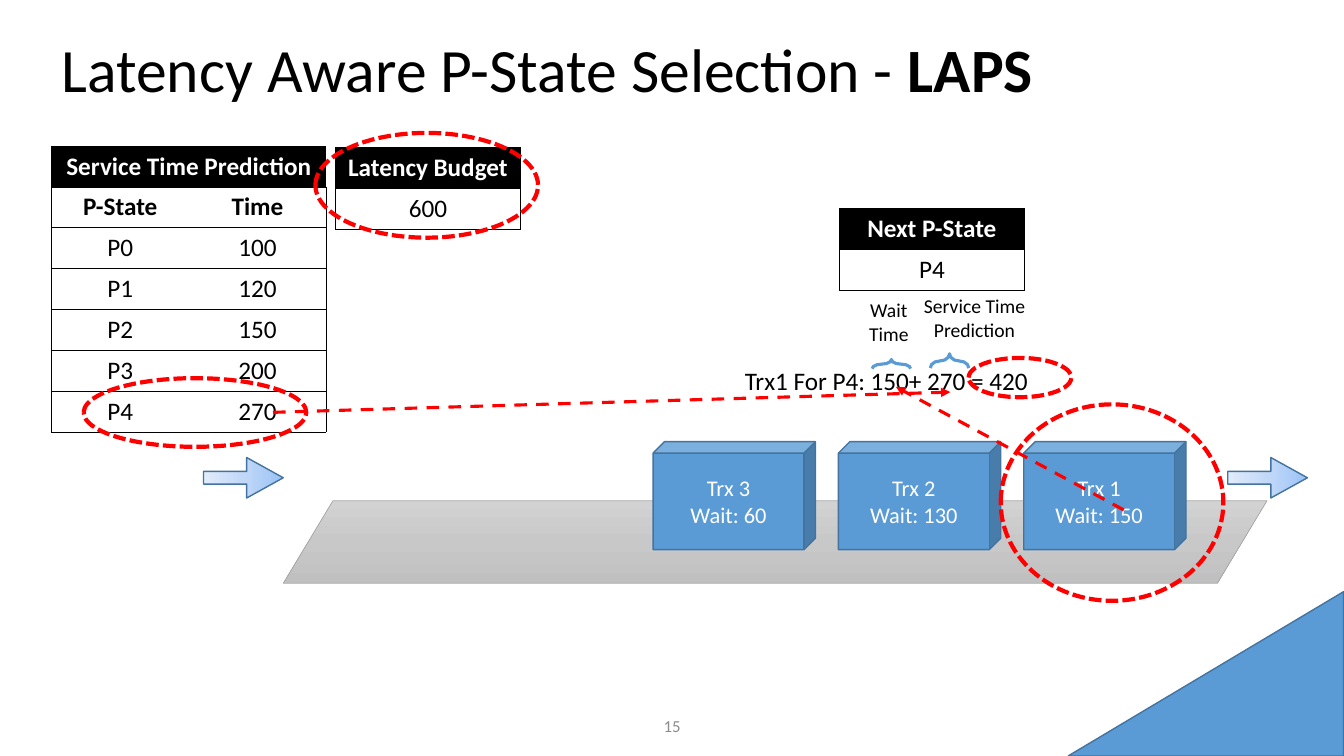
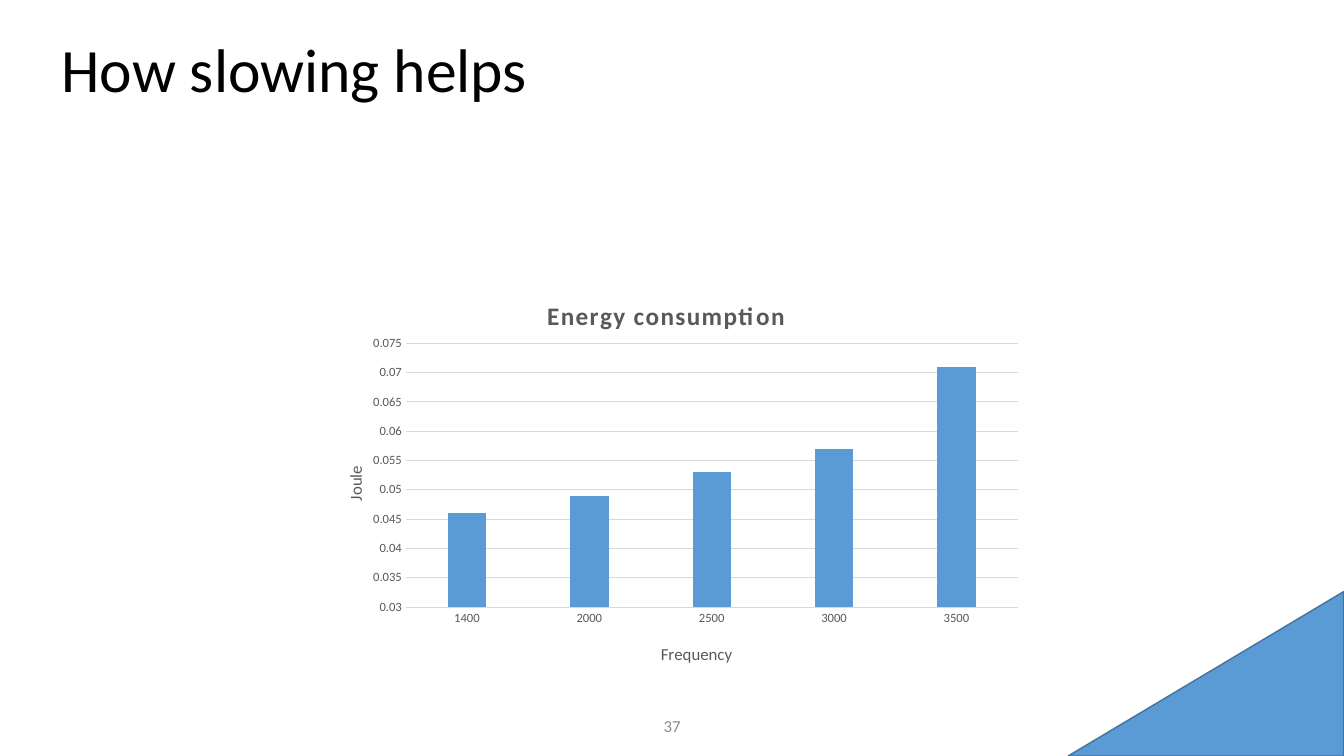
from dataclasses import dataclass
from typing import Optional

import pptx
import pptx.chart.data
import pptx.dml.color
import pptx.enum.chart
import pptx.enum.dml
import pptx.enum.shapes
import pptx.enum.text
import pptx.oxml
import pptx.oxml.ns
import pptx.util
from lxml import etree

Cm = pptx.util.Cm
Pt = pptx.util.Pt
RGBColor = pptx.dml.color.RGBColor
SHAPE = pptx.enum.shapes.MSO_SHAPE
DASH = pptx.enum.dml.MSO_LINE
ALIGN = pptx.enum.text.PP_ALIGN
ANCHOR = pptx.enum.text.MSO_ANCHOR
qn = pptx.oxml.ns.qn

# Shared look
FONT = "Calibri"
BLACK = RGBColor(0x00, 0x00, 0x00)
WHITE = RGBColor(0xFF, 0xFF, 0xFF)
BLUE = RGBColor(0x5B, 0x9B, 0xD5)
DARK_BLUE = RGBColor(0x43, 0x73, 0x9E)
RED = RGBColor(0xFF, 0x00, 0x00)
GREY = RGBColor(0xA5, 0xA5, 0xA5)
NUMBER_GREY = RGBColor(0x8C, 0x8C, 0x8C)
CHART_GREY = RGBColor(0x59, 0x59, 0x59)
GRID_GREY = RGBColor(0xD9, 0xD9, 0xD9)
BELT_GREYS = (RGBColor(0xD2, 0xD2, 0xD2), RGBColor(0xC8, 0xC8, 0xC8), RGBColor(0xC0, 0xC0, 0xC0))
ARROW_BLUES = (RGBColor(0x9A, 0xC3, 0xF5), RGBColor(0xC2, 0xD8, 0xF8), RGBColor(0xE1, 0xEB, 0xFB))
ROW_HEIGHT = 1.03


@dataclass(frozen=True)
class Box:
    """Place and size in centimetres."""
    x: float
    y: float
    w: float
    h: float

    def emu(self) -> tuple:
        return Cm(self.x), Cm(self.y), Cm(self.w), Cm(self.h)


@dataclass(frozen=True)
class Run:
    text: str
    size: float = 18
    color: RGBColor = BLACK
    bold: bool = False


@dataclass(frozen=True)
class Grid:
    x: float
    y: float
    col_width: float
    header: str
    rows: tuple
    bold_rows: int = 0


def style_font(font, size: float, color: RGBColor, bold: bool = False) -> None:
    font.name, font.size, font.bold = FONT, Pt(size), bold
    font.color.rgb = color


def fill_paragraph(p, runs: list, align=ALIGN.LEFT) -> None:
    p.alignment = align
    for run in runs:
        r = p.add_run()
        r.text = run.text
        style_font(r.font, run.size, run.color, run.bold)


def add_text(slide, box: Box, lines: list, align=ALIGN.LEFT, anchor=ANCHOR.TOP, spacing: float = 1.0) -> None:
    tf = slide.shapes.add_textbox(*box.emu()).text_frame
    tf.word_wrap = True
    tf.vertical_anchor = anchor
    for i, runs in enumerate(lines):
        p = tf.add_paragraph() if i else tf.paragraphs[0]
        p.line_spacing = spacing
        fill_paragraph(p, runs, align)


def add_shape(slide, kind, box: Box, line: RGBColor = DARK_BLUE, width: float = 1,
              fill: Optional[RGBColor] = None, adj: tuple = ()):
    s = slide.shapes.add_shape(kind, *box.emu())
    s.shadow.inherit = False
    for i, value in enumerate(adj):
        s.adjustments[i] = value
    if fill is None:
        s.fill.background()
    else:
        s.fill.solid()
        s.fill.fore_color.rgb = fill
    s.line.color.rgb = line
    s.line.width = Pt(width)
    return s


def set_gradient(s, colors: tuple, angle: int) -> None:
    """Replace the empty fill by evenly spaced colour stops."""
    grad = etree.Element(qn("a:gradFill"), rotWithShape="1")
    stops = etree.SubElement(grad, qn("a:gsLst"))
    for i, color in enumerate(colors):
        gs = etree.SubElement(stops, qn("a:gs"), pos=str(100000 * i // (len(colors) - 1)))
        etree.SubElement(gs, qn("a:srgbClr"), val=str(color))
    etree.SubElement(grad, qn("a:lin"), ang=str(angle * 60000), scaled="0")
    sp_pr = s._element.spPr
    sp_pr.replace(sp_pr.find(qn("a:noFill")), grad)


def add_ring(slide, box: Box) -> None:
    add_shape(slide, SHAPE.OVAL, box, RED, 3).line.dash_style = DASH.SQUARE_DOT


def add_pointer(slide, start: tuple, end: tuple) -> None:
    kind = pptx.enum.shapes.MSO_CONNECTOR.STRAIGHT
    s = slide.shapes.add_connector(kind, *(Cm(v) for v in start + end))
    s.line.color.rgb = RED
    s.line.width = Pt(2.25)
    s.line.dash_style = DASH.DASH
    etree.SubElement(s.line._get_or_add_ln(), qn("a:tailEnd"), type="triangle")
    etree.SubElement(s._element.spPr, qn("a:effectLst"))


def set_borders(cell, sides: str) -> None:
    tc_pr = cell._tc.get_or_add_tcPr()
    for side in "LRTB":
        ln = etree.SubElement(tc_pr, qn(f"a:ln{side}"), w=str(Pt(0.5)))
        if side in sides:
            solid = etree.SubElement(ln, qn("a:solidFill"))
            etree.SubElement(solid, qn("a:srgbClr"), val=str(BLACK))
        else:
            etree.SubElement(ln, qn("a:noFill"))


def add_grid(slide, grid: Grid) -> None:
    n_cols, n_rows = len(grid.rows[0]), len(grid.rows) + 1
    box = Box(grid.x, grid.y, grid.col_width * n_cols, ROW_HEIGHT * n_rows)
    table = slide.shapes.add_table(n_rows, n_cols, *box.emu()).table
    table.first_row = table.horz_banding = False
    header = (grid.header,) + ("",) * (n_cols - 1)
    for i, texts in enumerate((header,) + grid.rows):
        for j, text in enumerate(texts):
            cell = table.cell(i, j)
            set_borders(cell, "TB" + "L" * (j == 0) + "R" * (j == n_cols - 1))
            if i == 0:
                cell.fill.solid()
                cell.fill.fore_color.rgb = BLACK
            else:
                cell.fill.background()
            if text:
                run = Run(text, color=BLACK if i else WHITE, bold=i <= grid.bold_rows)
                fill_paragraph(cell.text_frame.paragraphs[0], [run], ALIGN.CENTER)
    if n_cols > 1:
        table.cell(0, 0).merge(table.cell(0, n_cols - 1))


def set_layout(parent, index: int, **fractions: float) -> None:
    """Fix the place of a chart part as fractions of the chart."""
    old = parent.find(qn("c:layout"))
    if old is not None:
        parent.remove(old)
    layout = etree.Element(qn("c:layout"))
    parent.insert(index, layout)
    manual = etree.SubElement(layout, qn("c:manualLayout"))
    if "w" in fractions:
        etree.SubElement(manual, qn("c:layoutTarget"), val="inner")
    for key in "xy":
        etree.SubElement(manual, qn(f"c:{key}Mode"), val="edge")
    for key, value in fractions.items():
        etree.SubElement(manual, qn(f"c:{key}"), val=str(value))


def set_chart_title(title, run: Run, x: float, y: float):
    tf = title.text_frame
    fill_paragraph(tf.paragraphs[0], [run], ALIGN.CENTER)
    set_layout(title._element, 1, x=x, y=y)
    return tf


def new_slide(prs, title: list, number: int):
    """Blank slide with corner triangle, title and slide number."""
    slide = prs.slides.add_slide(prs.slide_layouts[6])
    add_shape(slide, SHAPE.ISOSCELES_TRIANGLE, Box(26.92, 14.91, 6.94, 4.14), fill=BLUE, adj=(1,))
    add_text(slide, Box(1.3, 0, 26.54, 3.68), [title], anchor=ANCHOR.MIDDLE, spacing=0.9)
    add_text(slide, Box(13.13, 17.78, 7.62, 1.02), [[Run(str(number), 12, NUMBER_GREY)]],
             ALIGN.CENTER, ANCHOR.MIDDLE)
    return slide


def build_laps(prs) -> None:
    slide = new_slide(prs, [Run("Latency Aware P-State Selection - ", 44), Run("LAPS", 44, bold=True)], 15)

    # Conveyor belt with arrows in and out
    belt = add_shape(slide, SHAPE.PARALLELOGRAM, Box(7.14, 12.62, 24.79, 2.08), GREY, 0.5, adj=(0.601,))
    set_gradient(belt, BELT_GREYS, 90)
    for x in (5.13, 30.94):
        arrow = add_shape(slide, SHAPE.RIGHT_ARROW, Box(x, 11.53, 2.01, 1.02), adj=(0.313, 0.904))
        set_gradient(arrow, ARROW_BLUES, 180)

    # Queued transactions
    for i, (name, wait) in enumerate((("Trx 3", 60), ("Trx 2", 130), ("Trx 1", 150))):
        cube = add_shape(slide, SHAPE.CUBE, Box(16.46 + 4.67 * i, 11.13, 4.09, 2.72), fill=BLUE, adj=(0.106,))
        tf = cube.text_frame
        tf.vertical_anchor = ANCHOR.MIDDLE
        fill_paragraph(tf.paragraphs[0], [Run(name, 16, WHITE)], ALIGN.CENTER)
        fill_paragraph(tf.add_paragraph(), [Run(f"Wait: {wait}", 16, WHITE)], ALIGN.CENTER)

    # Tables
    times = (("P0", "100"), ("P1", "120"), ("P2", "150"), ("P3", "200"), ("P4", "270"))
    for grid in (
        Grid(8.46, 3.71, 4.65, "Latency Budget", (("600",),)),
        Grid(21.16, 5.26, 4.65, "Next P-State", (("P4",),)),
        Grid(1.3, 3.68, 3.46, "Service Time Prediction", (("P-State", "Time"),) + times, bold_rows=1),
    ):
        add_grid(slide, grid)

    # Latency sum with braces and their labels
    add_text(slide, Box(18.52, 9.07, 11.38, 1.02), [[Run("Trx1 For P4: 150+ 270 = 420")]])
    for box in (Box(22.35, 8.69, 0.23, 0.97), Box(23.75, 8.61, 0.36, 0.97)):
        add_shape(slide, SHAPE.RIGHT_BRACE, box, BLUE, 2.25, adj=(1.084, 0.5)).rotation = 270
    add_text(slide, Box(20.8, 7.39, 3.2, 1.45), [[Run("Wait", 14)], [Run("Time", 14)]], ALIGN.CENTER)
    add_text(slide, Box(22.96, 7.29, 3.2, 1.45), [[Run("Service Time Prediction", 14)]], ALIGN.CENTER)

    # Highlights
    add_pointer(slide, (6.88, 10.39), (23.95, 9.88))
    add_pointer(slide, (28.32, 12.85), (22.58, 9.75))
    for box in (Box(2.11, 9.53, 5.61, 1.73), Box(7.95, 3.35, 5.61, 2.64),
                Box(24.41, 9.02, 2.59, 0.99), Box(25.22, 10.19, 5.61, 4.95)):
        add_ring(slide, box)


def build_energy(prs) -> None:
    slide = new_slide(prs, [Run("How slowing helps", 44)], 37)
    data = pptx.chart.data.CategoryChartData()
    data.categories = ["1400", "2000", "2500", "3000", "3500"]
    data.add_series("Series 1", (0.046, 0.049, 0.053, 0.057, 0.071))
    kind = pptx.enum.chart.XL_CHART_TYPE.COLUMN_CLUSTERED
    chart = slide.shapes.add_chart(kind, *Box(7.87, 6.78, 18.14, 10.39).emu(), data).chart
    style_font(chart.font, 10, BLACK)
    chart.has_legend = False

    # Columns
    plot = chart.plots[0]
    plot.vary_by_categories = False
    plot.gap_width, plot.overlap = 219, -27
    fill = plot.series[0].format.fill
    fill.solid()
    fill.fore_color.rgb = BLUE

    # Axes
    cat, val = chart.category_axis, chart.value_axis
    for axis in (cat, val):
        axis.major_tick_mark = axis.minor_tick_mark = pptx.enum.chart.XL_TICK_MARK.NONE
        style_font(axis.tick_labels.font, 9, CHART_GREY)
    val.minimum_scale, val.maximum_scale, val.major_unit = 0.03, 0.075, 0.005
    val.format.line.fill.background()
    val.has_major_gridlines = True
    for line in (cat.format.line, val.major_gridlines.format.line):
        line.color.rgb = GRID_GREY
        line.width = Pt(0.75)

    # Titles and plot area
    chart.has_title = True
    tf = set_chart_title(chart.chart_title, Run("Energy consumption", 18, CHART_GREY, True), 0.32, 0.06)
    tf.paragraphs[0].runs[0].font._element.set("spc", "100")
    set_chart_title(cat.axis_title, Run("Frequency", 12, CHART_GREY), 0.48, 0.9)
    tf = set_chart_title(val.axis_title, Run("Joule", 12, CHART_GREY), 0.04, 0.47)
    tf._txBody.find(qn("a:bodyPr")).set("rot", "-5400000")
    set_layout(chart._chartSpace.chart.plotArea, 0, x=0.13, y=0.18, w=0.85, h=0.64)


def main() -> None:
    prs = pptx.Presentation()
    prs.slide_width, prs.slide_height = Cm(33.87), Cm(19.05)
    build_laps(prs)
    build_energy(prs)
    prs.save("out.pptx")


if __name__ == "__main__":
    main()
